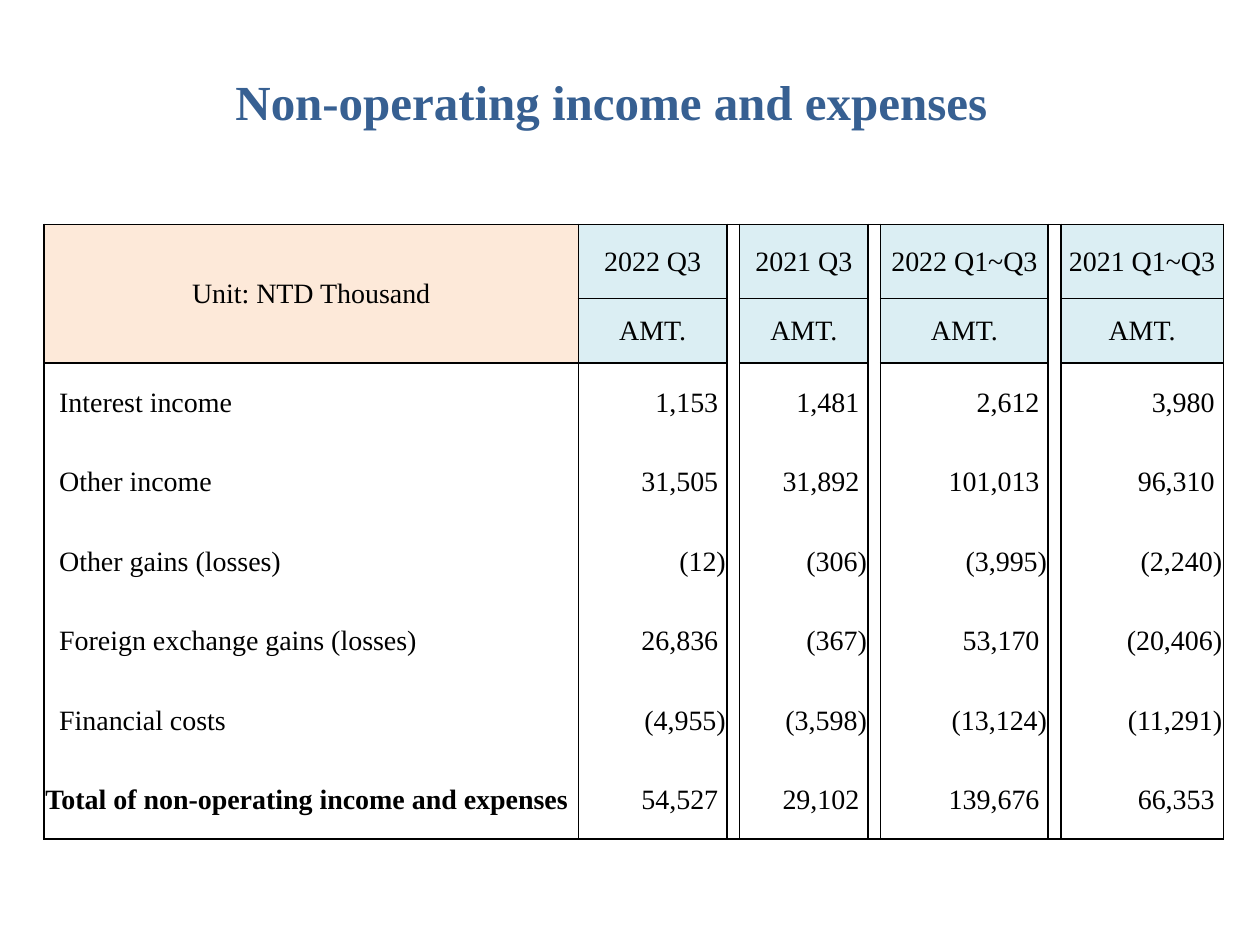
"""Build a slide with a table of non-operating income and expenses."""
from dataclasses import dataclass

from lxml import etree
from pptx import Presentation
from pptx.dml.color import RGBColor
from pptx.enum import text
from pptx.oxml import ns
from pptx.util import Inches, Pt


@dataclass(frozen=True)
class Theme:
    font: str = "Times New Roman"
    title_size: int = 28
    body_size: int = 16
    title: str = "376092"
    ink: str = "000000"
    unit_fill: str = "FDE9D9"
    period_fill: str = "DBEEF3"


theme = Theme()


def add_text(tf, value, size=theme.body_size, color=theme.ink, bold=False, align=text.PP_ALIGN.LEFT):
    p = tf.paragraphs[0]
    p.alignment = align
    p.font.size = Pt(size)
    r = p.add_run()
    r.text = value
    r.font.name = theme.font
    r.font.size = Pt(size)
    r.font.bold = bold
    r.font.color.rgb = RGBColor.from_string(color)


def set_borders(cell, visible):
    tc_pr = cell._tc.get_or_add_tcPr()
    for side in "LRTB":
        ln = etree.SubElement(tc_pr, ns.qn(f"a:ln{side}"), w=str(Pt(1)))
        if side in visible:
            fill = etree.SubElement(ln, ns.qn("a:solidFill"))
            etree.SubElement(fill, ns.qn("a:srgbClr"), val=theme.ink)
        else:
            etree.SubElement(ln, ns.qn("a:noFill"))


periods = ["2022 Q3", "2021 Q3", "2022 Q1~Q3", "2021 Q1~Q3"]
items = [
    ("Interest income", "1,153", "1,481", "2,612", "3,980"),
    ("Other income", "31,505", "31,892", "101,013", "96,310"),
    ("Other gains (losses)", "(12)", "(306)", "(3,995)", "(2,240)"),
    ("Foreign exchange gains (losses)", "26,836", "(367)", "53,170", "(20,406)"),
    ("Financial costs", "(4,955)", "(3,598)", "(13,124)", "(11,291)"),
    ("Total of non-operating income and expenses", "54,527", "29,102", "139,676", "66,353"),
]
rows = [("Unit: NTD Thousand", *periods), ("", *["AMT."] * len(periods)), *items]
col_widths = [4.24, 1.18, 0.1, 1.02, 0.1, 1.33, 0.1, 1.29]
row_heights = [0.59, 0.51] + [0.63] * len(items)
last = len(rows) - 1

prs = Presentation()
prs.slide_width, prs.slide_height = Inches(10), Inches(7.5)
s = prs.slides.add_slide(prs.slide_layouts[6])

sp = s.shapes.add_textbox(Inches(1.77), Inches(0.52), Inches(8.11), Inches(0.96))
sp.text_frame.word_wrap = True
add_text(sp.text_frame, "Non-operating income and expenses", size=theme.title_size, color=theme.title, bold=True)

table = s.shapes.add_table(
    len(rows), len(col_widths), Inches(0.35), Inches(1.78), Inches(sum(col_widths)), Inches(sum(row_heights))
).table
table.first_row = table.horz_banding = False
for col, width in zip(table.columns, col_widths):
    col.width = Inches(width)
for row, height in zip(table.rows, row_heights):
    row.height = Inches(height)
table.cell(0, 0).merge(table.cell(1, 0))

for i, values in enumerate(rows):
    for j in range(len(col_widths)):
        cell = table.cell(i, j)
        is_gap = j > 0 and j % 2 == 0
        is_header = i < 2 and not is_gap
        top = i == 0 or (i <= 2 and not is_gap)
        bottom = i == last or is_header
        set_borders(cell, "LR" + "T" * top + "B" * bottom)
        cell.margin_left = cell.margin_right = cell.margin_top = Inches(0.01)
        cell.margin_bottom = 0
        cell.vertical_anchor = text.MSO_ANCHOR.MIDDLE
        if is_header:
            cell.fill.solid()
            cell.fill.fore_color.rgb = RGBColor.from_string(theme.period_fill if j else theme.unit_fill)
        else:
            cell.fill.background()
        value = "" if is_gap else values[(j + 1) // 2]
        if not value:
            continue
        align = text.PP_ALIGN.CENTER
        if not is_header:
            align = text.PP_ALIGN.RIGHT if j else text.PP_ALIGN.LEFT
            if j and not value.endswith(")"):
                cell.margin_right = Inches(0.07)
            elif j == 0 and i < last:
                cell.margin_left = Inches(0.12)
        add_text(cell.text_frame, value, bold=i == last and j == 0, align=align)

prs.save("out.pptx")
